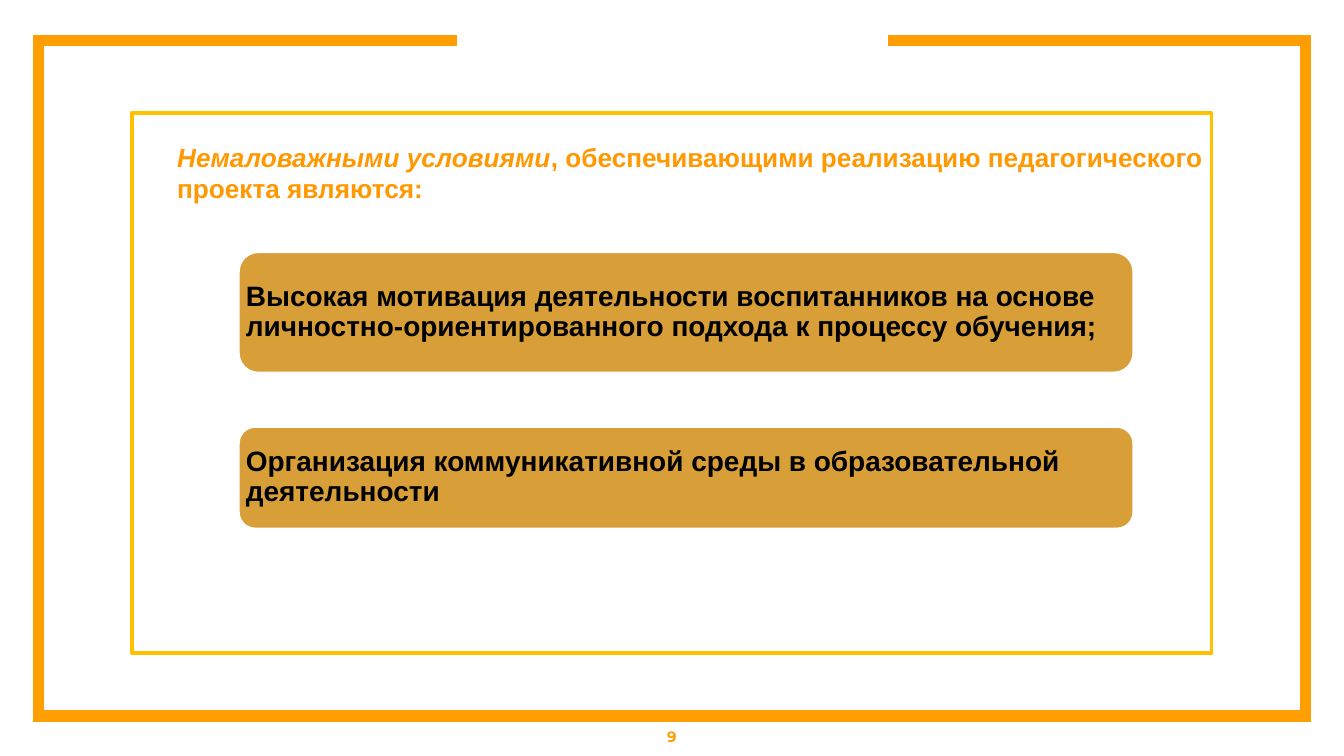
"""Build the slide listing the conditions for carrying out the teaching project."""
import pptx
import pptx.dml.color
import pptx.enum.shapes
import pptx.enum.text
import pptx.oxml
import pptx.oxml.ns
import pptx.util

RGBColor = pptx.dml.color.RGBColor
Kind = pptx.enum.shapes.MSO_SHAPE
Align = pptx.enum.text.PP_ALIGN
Anchor = pptx.enum.text.MSO_ANCHOR
Fit = pptx.enum.text.MSO_AUTO_SIZE

ORANGE = RGBColor(0xFF, 0x9E, 0x00)
HEADING = RGBColor(0xFF, 0x98, 0x01)
AMBER = RGBColor(0xFF, 0xC0, 0x00)
OCHRE = RGBColor(0xD8, 0x9F, 0x39)
WHITE = RGBColor(0xFF, 0xFF, 0xFF)
BLACK = RGBColor(0x00, 0x00, 0x00)

WIDTH = pptx.util.Inches(10)
HEIGHT = WIDTH * 9 // 16

CARD_LEFT, CARD_WIDTH = 17.7, 66.7
CARDS = [
    (33.24, 16.18, "Высокая мотивация деятельности воспитанников на основе "
                   "личностно-ориентированного подхода к процессу обучения;"),
    (56.36, 13.69, "Организация коммуникативной среды в образовательной деятельности"),
]
FRAME_POINTS = [(34, 5.33), (2.85, 5.33), (2.85, 94.7),
                (97.15, 94.7), (97.15, 5.33), (66.1, 5.33)]


def place(left, top, *size):
    """Turn percentages of the slide's width and height into lengths."""
    shares = (left, top, *size)
    return [int(share * (HEIGHT if index % 2 else WIDTH) / 100)
            for index, share in enumerate(shares)]


def set_values(target, values):
    """Set each named attribute of the target."""
    for name, value in values.items():
        setattr(target, name, value)


def add_frame(page):
    """Draw the thick frame that is open at the top."""
    start, *corners = [place(*point) for point in FRAME_POINTS]
    builder = page.shapes.build_freeform(*start)
    builder.add_line_segments(corners, close=False)
    frame = builder.convert_to_shape()
    frame.shadow.inherit = False
    frame.fill.background()
    frame.line.color.rgb = ORANGE
    frame.line.width = pptx.util.Pt(6)
    miter = f'<a:miter {pptx.oxml.ns.nsdecls("a")} lim="800000"/>'
    frame.line._get_or_add_ln().append(pptx.oxml.parse_xml(miter))


def add_panel(page, kind, area, fill, line):
    """Add a filled and outlined shape."""
    panel = page.shapes.add_shape(kind, *place(*area))
    panel.shadow.inherit = False
    panel.fill.solid()
    panel.fill.fore_color.rgb = fill
    panel.line.color.rgb = line
    panel.line.width = pptx.util.Pt(2)


def add_text(page, area, spans, color, size, font="Arial", inset=None,
             anchor=Anchor.TOP, fit=Fit.NONE, **layout):
    """Add a text box with one bold paragraph made of (text, italic) spans."""
    box = page.shapes.add_textbox(*place(*area))
    frame = box.text_frame
    set_values(frame, {"word_wrap": True, "vertical_anchor": anchor, "auto_size": fit})
    if inset is not None:
        sides = ("left", "top", "right", "bottom")
        set_values(frame, {f"margin_{side}": pptx.util.Inches(inset) for side in sides})
    para = frame.paragraphs[0]
    set_values(para, {"alignment": Align.LEFT, **layout})
    for text, italic in spans:
        span = para.add_run()
        span.text = text
        set_values(span.font, {"name": font, "size": pptx.util.Pt(size),
                               "bold": True, "italic": italic})
        span.font.color.rgb = color


def main():
    """Build and save the deck."""
    deck = pptx.Presentation()
    set_values(deck, {"slide_width": WIDTH, "slide_height": HEIGHT})
    page = deck.slides.add_slide(deck.slide_layouts[6])

    add_frame(page)
    add_text(page, (0, 94.76, 100, 5.33), [("9", False)], ORANGE, 8, font="Montserrat",
             inset=0.1, anchor=Anchor.MIDDLE, alignment=Align.CENTER)

    add_panel(page, Kind.RECTANGLE, (9.8, 14.95, 80.35, 71.47), WHITE, AMBER)
    for top, height, text in CARDS:
        area = (CARD_LEFT, top, CARD_WIDTH, height)
        add_panel(page, Kind.ROUNDED_RECTANGLE, area, OCHRE, WHITE)
        add_text(page, area, [(text, False)], BLACK, 15, inset=0.06,
                 anchor=Anchor.MIDDLE, line_spacing=0.9)

    add_text(page, (12.2, 17.78, 78.7, 10.13),
             [("Немаловажными условиями", True),
              (", обеспечивающими реализацию педагогического проекта являются:", False)],
             HEADING, 14, fit=Fit.SHAPE_TO_FIT_TEXT)
    deck.save("out.pptx")


if __name__ == "__main__":
    main()
